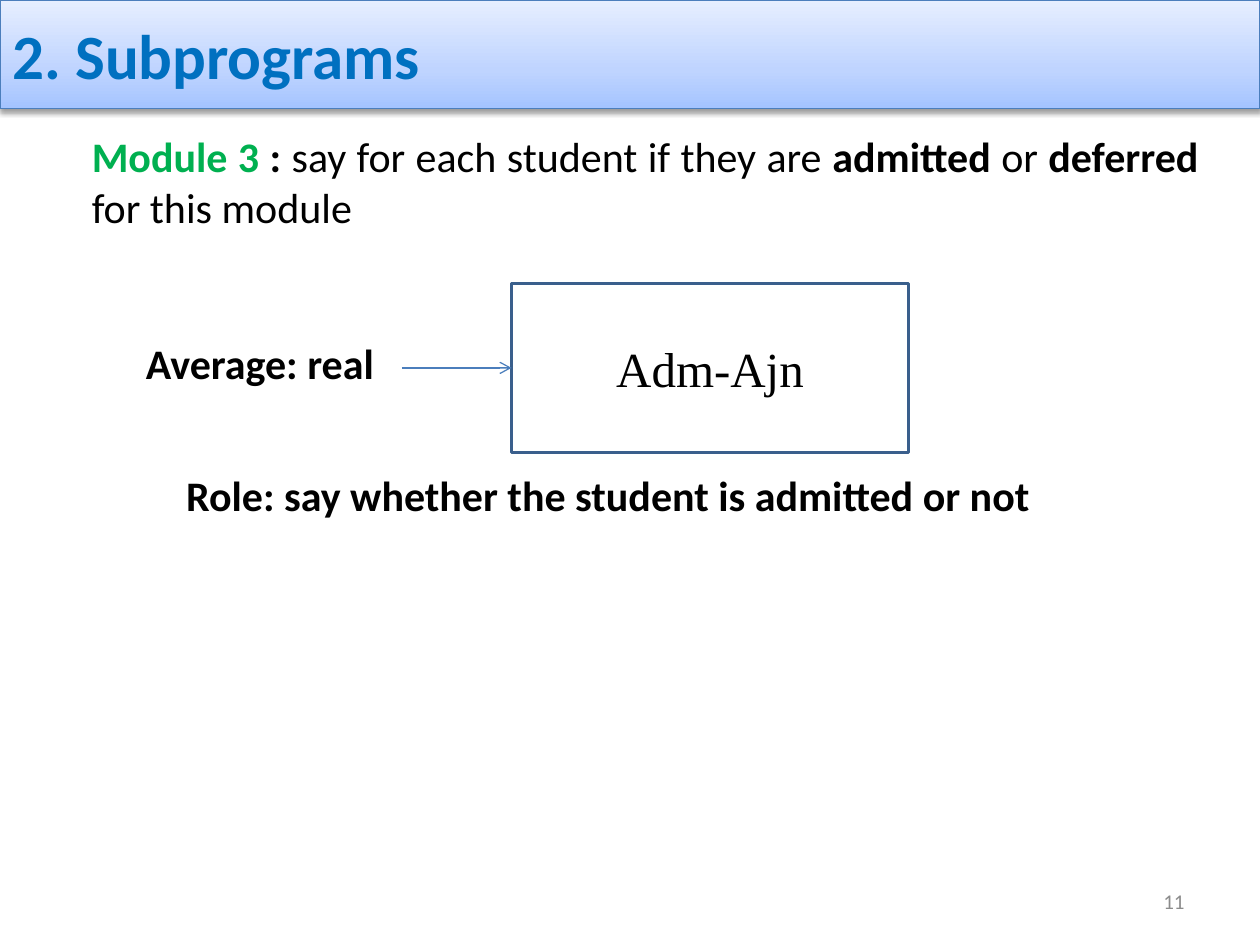
from dataclasses import dataclass

from lxml import etree
from pptx import Presentation
from pptx import util as u
from pptx.dml.color import RGBColor
from pptx.enum import shapes, text
from pptx.oxml import ns


@dataclass(frozen=True)
class Theme:
    body_font: str = "Calibri"
    module_font: str = "Times New Roman"
    title_size: int = 36
    module_size: int = 28
    body_size: int = 24
    number_size: int = 12
    title: str = "0070C0"
    accent: str = "00B050"
    ink: str = "000000"
    muted: str = "8C8C8C"
    thin_line: str = "4B7EBC"
    module_line: str = "3A5F8C"
    banner: tuple = ((0, "A4C4FF"), (35, "BFD4FF"), (100, "E6EEFF"))


THEME = Theme()


def add_element(parent, tag, **attributes):
    return etree.SubElement(parent, ns.qn(tag), attributes)


def add_span(para, words, size=THEME.body_size, color=THEME.ink, bold=False, font=THEME.body_font):
    span = para.add_run()
    span.text = words
    span.font.name = font
    span.font.size = u.Pt(size)
    span.font.bold = bold
    span.font.color.rgb = RGBColor.from_string(color)


def first_para(box, align=text.PP_ALIGN.LEFT, anchor=text.MSO_ANCHOR.MIDDLE, wrap=True):
    frame = box.text_frame
    frame.word_wrap = wrap
    frame.vertical_anchor = anchor
    para = frame.paragraphs[0]
    para.alignment = align
    return para


def add_text_box(page, left, top, width, height, **layout):
    box = page.shapes.add_textbox(*map(u.Inches, (left, top, width, height)))
    return first_para(box, **layout)


def add_rectangle(page, left, top, width, height, line_color, line_width):
    box = page.shapes.add_shape(
        shapes.MSO_SHAPE.RECTANGLE, *map(u.Inches, (left, top, width, height)))
    box.shadow.inherit = False
    box.fill.background()
    box.line.color.rgb = RGBColor.from_string(line_color)
    box.line.width = u.Pt(line_width)
    return box


def shade_banner(banner):
    properties = banner._element.spPr
    gradient = etree.Element(ns.qn("a:gradFill"), rotWithShape="1")
    stops = add_element(gradient, "a:gsLst")
    for position, color in THEME.banner:
        stop = add_element(stops, "a:gs", pos=str(position * 1000))
        add_element(stop, "a:srgbClr", val=color)
    add_element(gradient, "a:lin", ang=str(270 * 60000), scaled="0")
    properties.replace(properties.find(ns.qn("a:noFill")), gradient)

    effects = properties.find(ns.qn("a:effectLst"))
    shadow = add_element(
        effects, "a:outerShdw", blurRad=str(u.Pt(3.1)), dist=str(u.Pt(1.6)),
        dir=str(90 * 60000), rotWithShape="0")
    shade = add_element(shadow, "a:srgbClr", val=THEME.ink)
    add_element(shade, "a:alpha", val="38000")


def add_title(page, left, top, width, height):
    banner = add_rectangle(page, left, top, width, height, THEME.thin_line, 0.75)
    shade_banner(banner)
    add_span(first_para(banner), "2. Subprograms", THEME.title_size, THEME.title, True)


def add_description(page, left, top, width, height):
    para = add_text_box(page, left, top, width, height,
                        align=text.PP_ALIGN.JUSTIFY, anchor=text.MSO_ANCHOR.TOP)
    add_span(para, "Module 3 ", color=THEME.accent, bold=True)
    for words, bold in (
        (": ", True),
        ("say for each student if they are ", False),
        ("admitted ", True),
        ("or ", False),
        ("deferred ", True),
        ("for this module", False),
    ):
        add_span(para, words, bold=bold)


def add_module_diagram(page, left, top, width, height):
    module_width = 3.15
    module_left = left + width - module_width
    module = add_rectangle(
        page, module_left, top, module_width, height, THEME.module_line, 2)
    add_span(first_para(module, text.PP_ALIGN.CENTER), "Adm-Ajn",
             THEME.module_size, font=THEME.module_font)

    middle = u.Inches(top + height / 2)
    arrow = page.shapes.add_connector(
        shapes.MSO_CONNECTOR.STRAIGHT,
        u.Inches(module_left - 0.87), middle, u.Inches(module_left), middle)
    arrow.end_connect(module, 1)
    arrow.line.color.rgb = RGBColor.from_string(THEME.thin_line)
    arrow.line.width = u.Pt(0.75)
    add_element(arrow.line._get_or_add_ln(), "a:tailEnd", type="arrow")
    add_element(arrow._element.spPr, "a:effectLst")

    label = add_text_box(page, left, top + 0.38, 2.24, 0.5,
                         anchor=text.MSO_ANCHOR.TOP, wrap=False)
    add_span(label, "Average: real", bold=True)


def add_role(page, left, top, width, height):
    para = add_text_box(page, left, top, width, height, anchor=text.MSO_ANCHOR.TOP)
    add_span(para, "Role: say whether the student is admitted or not", bold=True)


def add_page_number(page, left, top, width, height):
    para = add_text_box(page, left, top, width, height, align=text.PP_ALIGN.RIGHT)
    add_span(para, "11", THEME.number_size, THEME.muted)


def main():
    deck = Presentation()
    deck.slide_width, deck.slide_height = u.Inches(10), u.Inches(7.5)
    page = deck.slides.add_slide(deck.slide_layouts[6])
    add_description(page, 0.63, 0.99, 8.98, 0.95)
    add_title(page, 0, 0, 10, 0.86)
    add_module_diagram(page, 1.06, 2.25, 6.15, 1.34)
    add_role(page, 1.38, 3.68, 8.23, 0.5)
    add_page_number(page, 7.17, 6.95, 2.33, 0.4)
    deck.save("out.pptx")


if __name__ == "__main__":
    main()
